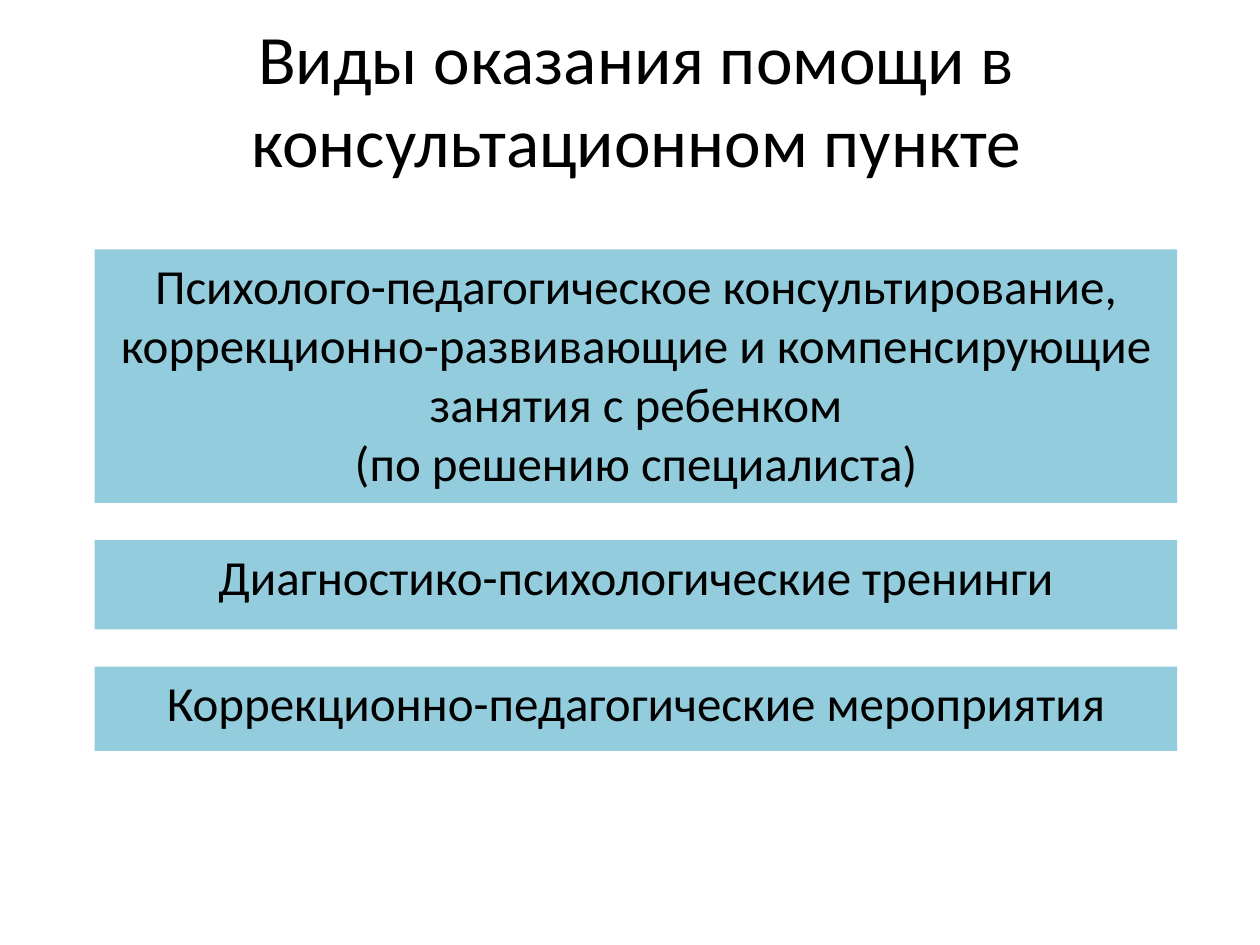
from dataclasses import dataclass

from pptx import Presentation
from pptx.dml.color import RGBColor
from pptx.enum.shapes import MSO_SHAPE
from pptx.enum.text import MSO_ANCHOR, PP_ALIGN
from pptx.util import Cm, Pt

RECT = MSO_SHAPE.RECTANGLE
CENTER = PP_ALIGN.CENTER
TOP, MIDDLE = MSO_ANCHOR.TOP, MSO_ANCHOR.MIDDLE


@dataclass(frozen=True)
class Theme:
    font: str = "Calibri"
    text: RGBColor = RGBColor(0x00, 0x00, 0x00)
    band: RGBColor = RGBColor(0x93, 0xCD, 0xDD)
    title_size: float = 39.6
    band_size: float = 28


THEME = Theme()


def set_text(sp, text, size, anchor):
    """Fill a shape with centred text, one paragraph per line."""
    tf = sp.text_frame
    tf.word_wrap = True
    tf.vertical_anchor = anchor
    tf.text = text
    for p in tf.paragraphs:
        p.alignment = CENTER
        for r in p.runs:
            r.font.name = THEME.font
            r.font.size = Pt(size)
            r.font.color.rgb = THEME.text


prs = Presentation()
prs.slide_width, prs.slide_height = Cm(25.4), Cm(19.05)
s = prs.slides.add_slide(prs.slide_layouts[6])

title = s.shapes.add_textbox(Cm(1.4), Cm(0.4), Cm(22.86), Cm(3.18))
set_text(title, "Виды оказания помощи в консультационном пункте", THEME.title_size, MIDDLE)

# Kinds of help: band height in cm and wording
bands = [
    (5.11, "Психолого-педагогическое консультирование, "
           "коррекционно-развивающие и компенсирующие занятия с ребенком\n"
           "(по решению специалиста)"),
    (1.8, "Диагностико-психологические тренинги"),
    (1.7, "Коррекционно-педагогические мероприятия"),
]
gap = 0.75
top = 5.03
for height, text in bands:
    sp = s.shapes.add_shape(RECT, Cm(1.91), Cm(top), Cm(21.82), Cm(height))
    sp.shadow.inherit = False
    sp.fill.solid()
    sp.fill.fore_color.rgb = THEME.band
    sp.line.fill.background()
    set_text(sp, text, THEME.band_size, TOP)
    top += height + gap

prs.save("out.pptx")
